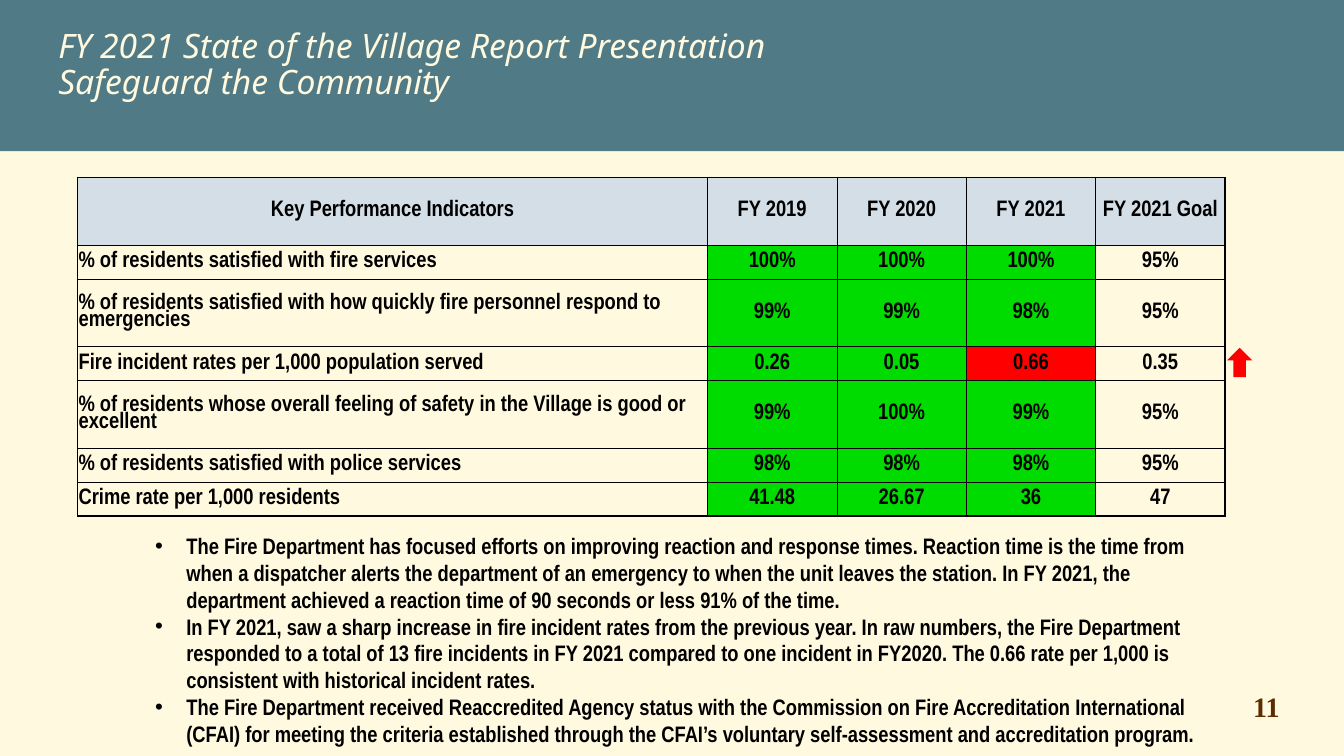
from lxml import etree
from pptx import Presentation
from pptx.dml.color import RGBColor
from pptx.enum.shapes import MSO_SHAPE
from pptx.enum.text import MSO_ANCHOR, PP_ALIGN
from pptx.oxml.ns import qn
from pptx.util import Inches, Pt

CENTER, LEFT = PP_ALIGN.CENTER, PP_ALIGN.LEFT
MIDDLE = MSO_ANCHOR.MIDDLE
RECTANGLE, UP_ARROW = MSO_SHAPE.RECTANGLE, MSO_SHAPE.UP_ARROW

CREAM = RGBColor(0xFF, 0xF9, 0xDF)
TEAL = RGBColor(0x50, 0x7A, 0x85)
BROWN = RGBColor(0x5D, 0x2B, 0x00)
BLACK = RGBColor(0x00, 0x00, 0x00)
PALE_BLUE = RGBColor(0xD3, 0xDE, 0xE7)
GREEN = RGBColor(0x00, 0xDC, 0x00)
RED = RGBColor(0xFF, 0x00, 0x00)

SLIDE_WIDTH, SLIDE_HEIGHT = 13.33, 7.5
ROW_UNIT = 0.336
ROW_UNITS = [2, 1, 2, 1, 2, 1, 1]
COLUMN_SHARES = [0.549] + [0.11275] * 4
MISSED_ROW, MISSED_COLUMN = 3, 3

TITLE = ["FY 2021 State of the Village Report Presentation", "Safeguard the Community"]
INDICATORS = [
    ["Key Performance Indicators", "FY 2019", "FY 2020", "FY 2021", "FY 2021 Goal"],
    ["% of residents satisfied with fire services", "100%", "100%", "100%", "95%"],
    ["% of residents satisfied with how quickly fire personnel respond to emergencies",
     "99%", "99%", "98%", "95%"],
    ["Fire incident rates per 1,000 population served", "0.26", "0.05", "0.66", "0.35"],
    ["% of residents whose overall feeling of safety in the Village is good or excellent",
     "99%", "100%", "99%", "95%"],
    ["% of residents satisfied with police services", "98%", "98%", "98%", "95%"],
    ["Crime rate per 1,000 residents", "41.48", "26.67", "36", "47"],
]
NOTES = [
    "The Fire Department has focused efforts on improving reaction and response times. "
    "Reaction time is the time from when a dispatcher alerts the department of an emergency "
    "to when the unit leaves the station. In FY 2021, the department achieved a reaction time "
    "of 90 seconds or less 91% of the time.",
    "In FY 2021, saw a sharp increase in fire incident rates from the previous year. In raw "
    "numbers, the Fire Department responded to a total of 13 fire incidents in FY 2021 compared "
    "to one incident in FY2020. The 0.66 rate per 1,000 is consistent with historical incident "
    "rates.",
    "The Fire Department received Reaccredited Agency status with the Commission on Fire "
    "Accreditation International (CFAI) for meeting the criteria established through the CFAI’s "
    "voluntary self-assessment and accreditation program.",
]


def write_text(frame, lines, font="Arial Narrow", size=16, color=BLACK, bold=True,
               italic=False, align=LEFT, spacing=1.0, bullet=None):
    """Fill a text frame with one formatted paragraph per line."""
    frame.word_wrap = True
    for index, line in enumerate(lines):
        paragraph = frame.add_paragraph() if index else frame.paragraphs[0]
        paragraph.alignment, paragraph.line_spacing = align, spacing
        run = paragraph.add_run()
        run.text = line
        run.font.name, run.font.size = font, Pt(size)
        run.font.bold, run.font.italic = bold, italic
        run.font.color.rgb = color
        if bullet:
            properties = paragraph._p.get_or_add_pPr()
            properties.set("marL", str(Inches(0.31)))
            properties.set("indent", str(-Inches(0.31)))
            etree.SubElement(properties, qn("a:buFont"), typeface="Arial")
            etree.SubElement(properties, qn("a:buChar"), char=bullet)


def add_text(slide, box, lines, **formatting):
    """Place a text box in the given box."""
    frame = slide.shapes.add_textbox(*map(Inches, box)).text_frame
    write_text(frame, lines, **formatting)


def add_solid(slide, kind, box, color):
    """Place a plain filled shape in the given box."""
    solid = slide.shapes.add_shape(kind, *map(Inches, box))
    solid.shadow.inherit = False
    solid.fill.solid()
    solid.fill.fore_color.rgb = color
    solid.line.fill.background()


def set_borders(cell, widths):
    """Draw black cell borders, widths in points for left, right, top and bottom."""
    properties = cell._tc.get_or_add_tcPr()
    for index, (tag, width) in enumerate(zip(("lnL", "lnR", "lnT", "lnB"), widths)):
        border = etree.Element(qn(f"a:{tag}"), w=str(Pt(width)))
        fill = etree.SubElement(border, qn("a:solidFill"))
        etree.SubElement(fill, qn("a:srgbClr"), val=str(BLACK))
        properties.insert(index, border)


def cell_color(row, column):
    """Return the fill of an indicator cell, or None where it is clear."""
    if row == 0:
        return PALE_BLUE
    if (row, column) == (MISSED_ROW, MISSED_COLUMN):
        return RED
    return GREEN if 1 <= column <= 3 else None


def add_header(slide, box):
    """Draw the title band and its two lines."""
    left, top, width, height = box
    add_solid(slide, RECTANGLE, box, TEAL)
    add_text(slide, (left + 0.48, top + 0.24, width * 0.83, height * 0.61), TITLE,
             font="Noto Sans", size=24, color=CREAM, bold=False, italic=True, spacing=0.9)


def add_indicators(slide, box):
    """Draw the indicator table and the arrow beside the missed goal."""
    left, top, width, height = box
    last_row, last_column = len(INDICATORS) - 1, len(COLUMN_SHARES) - 1
    table = slide.shapes.add_table(last_row + 1, last_column + 1, *map(Inches, box)).table
    table.first_row = table.horz_banding = False
    for column, share in zip(table.columns, COLUMN_SHARES):
        column.width = Inches(width * share)
    for row, units in zip(table.rows, ROW_UNITS):
        row.height = Inches(height * units / sum(ROW_UNITS))
    for row, values in enumerate(INDICATORS):
        for column, value in enumerate(values):
            cell = table.cell(row, column)
            cell.margin_left = cell.margin_right = cell.margin_top = Inches(0.01)
            cell.margin_bottom = 0
            cell.vertical_anchor = MIDDLE
            write_text(cell.text_frame, [value], spacing=0.8,
                       align=CENTER if row == 0 or column else LEFT)
            color = cell_color(row, column)
            if color is None:
                cell.fill.background()
            else:
                cell.fill.solid()
                cell.fill.fore_color.rgb = color
            edges = (column == 0, column == last_column, row == 0, row == last_row)
            set_borders(cell, [1 if edge else 0.5 for edge in edges])
    arrow_top = top + sum(ROW_UNITS[:MISSED_ROW]) * ROW_UNIT + 0.01
    add_solid(slide, UP_ARROW, (left + width + 0.02, arrow_top, 0.25, 0.29), RED)


def main():
    """Build the slide and save it."""
    deck = Presentation()
    deck.slide_width, deck.slide_height = Inches(SLIDE_WIDTH), Inches(SLIDE_HEIGHT)
    slide = deck.slides.add_slide(deck.slide_layouts[6])
    slide.background.fill.solid()
    slide.background.fill.fore_color.rgb = CREAM
    add_header(slide, (0, 0, SLIDE_WIDTH, SLIDE_HEIGHT / 5))
    add_text(slide, (12.33, 6.79, 0.69, 0.44), ["11"],
             font="Times New Roman", size=20, color=BROWN)
    add_text(slide, (1.44, 5.23, 10.72, 2.26), NOTES, bullet="•")
    add_indicators(slide, (0.77, 1.76, 11.38, ROW_UNIT * sum(ROW_UNITS)))
    deck.save("out.pptx")


if __name__ == "__main__":
    main()
